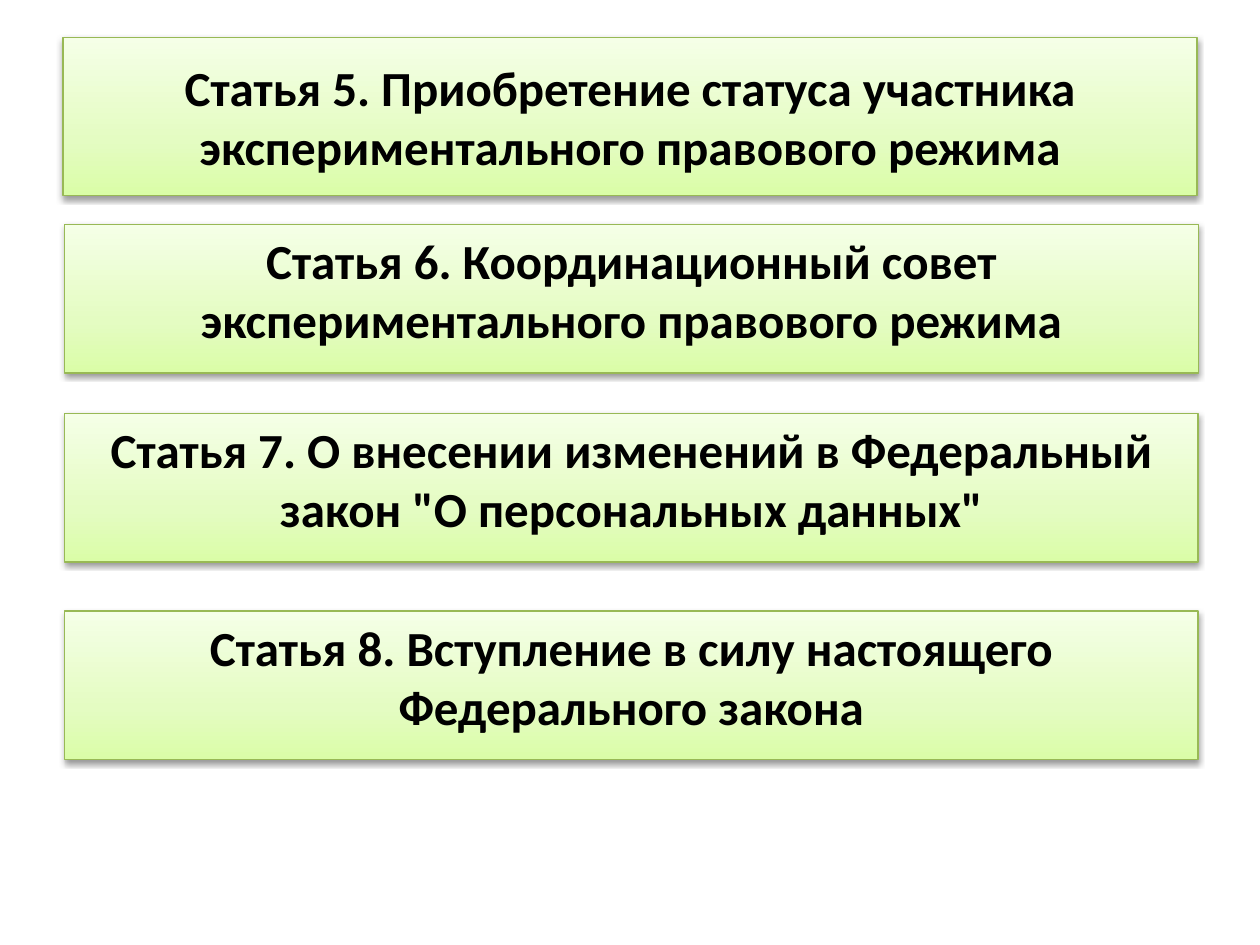
from copy import deepcopy
from dataclasses import dataclass

from lxml import etree
from pptx import Presentation
from pptx.dml.color import RGBColor
from pptx.enum.shapes import MSO_SHAPE
from pptx.enum.text import MSO_ANCHOR, MSO_AUTO_SIZE, PP_ALIGN
from pptx.oxml.ns import qn
from pptx.util import Inches, Pt

RECTANGLE = MSO_SHAPE.RECTANGLE
TOP, MIDDLE = MSO_ANCHOR.TOP, MSO_ANCHOR.MIDDLE
CENTER = PP_ALIGN.CENTER
NO_AUTOFIT = MSO_AUTO_SIZE.NONE


@dataclass(frozen=True)
class Theme:
    """Colours, type and line sizes of the article cards."""

    gradient: tuple = ((0, "DAFDA7"), (0.35, "E4FCC2"), (1, "F5FFE7"))
    border: str = "98B955"
    shadow: str = "000000"
    ink: str = "000000"
    font: str = "Calibri"
    size: float = 28
    border_width: float = 0.75
    space_before: float = 5.6


def write_text(shape, text, *, font, size, color, anchor=TOP, space_before=0):
    """Fill a shape with one bold, centred paragraph without a bullet."""
    frame = shape.text_frame
    frame.word_wrap = True
    frame.auto_size = NO_AUTOFIT
    frame.vertical_anchor = anchor
    paragraph = frame.paragraphs[0]
    paragraph.alignment = CENTER
    paragraph.space_before = Pt(space_before)
    properties = paragraph._p.get_or_add_pPr()
    properties.set("marL", "0")
    properties.set("indent", "0")
    etree.SubElement(properties, qn("a:buNone"))
    run = paragraph.add_run()
    run.text = text
    run.font.name = font
    run.font.size = Pt(size)
    run.font.bold = True
    run.font.color.rgb = RGBColor.from_string(color)


class ArticleSlide:
    """Draws article cards on one slide in a shared style."""

    def __init__(self, slide, theme):
        """Keep the slide and its theme."""
        self.slide = slide
        self.theme = theme

    def title(self, text, *box):
        """Place the title placeholder as a card."""
        self._card(self.slide.shapes.title, text, box, anchor=MIDDLE)

    def body(self, text, *box):
        """Place the body placeholder as a card."""
        self._card(self.slide.placeholders[1], text, box,
                   space_before=self.theme.space_before)

    def card(self, text, *box):
        """Add a rectangle as a card."""
        article = self.slide.shapes.add_shape(RECTANGLE, *box)
        self._card(article, text, box, space_before=self.theme.space_before)

    def _card(self, shape, text, box, **text_format):
        """Position a shape and give it the card style and text."""
        shape.left, shape.top, shape.width, shape.height = box
        self._gradient(shape)
        shape.line.color.rgb = RGBColor.from_string(self.theme.border)
        shape.line.width = Pt(self.theme.border_width)
        self._shadow(shape)
        write_text(shape, text, font=self.theme.font, size=self.theme.size,
                   color=self.theme.ink, **text_format)

    def _gradient(self, shape):
        """Fill a shape with the three-stop gradient, rising from the bottom."""
        shape.fill.gradient()
        shape.fill.gradient_angle = 90
        stop_list = shape._element.spPr.find(".//" + qn("a:gsLst"))
        stop_list.append(deepcopy(stop_list[0]))
        for stop, (position, color) in zip(shape.fill.gradient_stops, self.theme.gradient):
            stop.position = position
            stop.color.rgb = RGBColor.from_string(color)

    def _shadow(self, shape):
        """Give a shape a soft shadow below it."""
        shape.shadow.inherit = False
        effects = shape._element.spPr.find(qn("a:effectLst"))
        shadow = etree.SubElement(effects, qn("a:outerShdw"), blurRad=str(Pt(3.1)),
                                  dist=str(Pt(1.6)), dir="5400000", rotWithShape="0")
        color = etree.SubElement(shadow, qn("a:srgbClr"), val=self.theme.shadow)
        etree.SubElement(color, qn("a:alpha"), val="38000")


def main():
    """Build and save the slide."""
    deck = Presentation()
    deck.slide_width, deck.slide_height = Inches(10), Inches(7.5)
    page = ArticleSlide(deck.slides.add_slide(deck.slide_layouts[1]), Theme())
    left, width, height = Inches(0.51), Inches(9), Inches(1.18)

    page.title("Статья 5. Приобретение статуса участника экспериментального правового режима",
               Inches(0.5), Inches(0.3), width, Inches(1.25))
    page.body("Статья 6. Координационный совет экспериментального правового режима",
              left, Inches(1.78), width, height)
    for top, article in (
        (3.28, 'Статья 7. О внесении изменений в Федеральный закон "О персональных данных"'),
        (4.85, "Статья 8. Вступление в силу настоящего Федерального закона"),
    ):
        page.card(article, left, Inches(top), width, height)
    deck.save("out.pptx")


if __name__ == "__main__":
    main()
